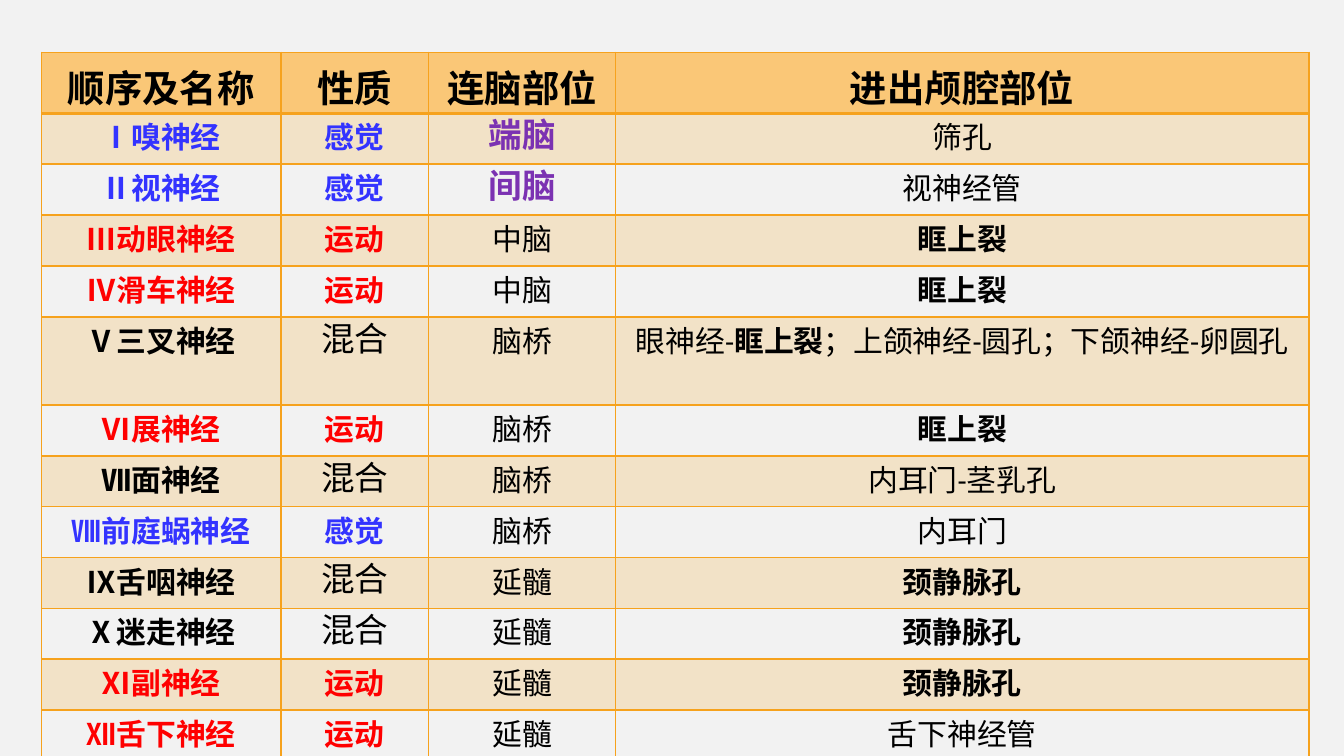
from lxml.etree import SubElement
from pptx import Presentation
from pptx.dml.color import RGBColor
from pptx.enum.text import PP_ALIGN as Align
from pptx.oxml.ns import qn
from pptx.util import Inches, Pt

COLORS = {
    "background": "F2F2F2",
    "header": "FAC777",
    "accent": "F6A21D",
    "text": "000000",
    "sensory": "3333FF",
    "motor": "FF0000",
    "purple": "7B32B2",
    "purple_dark": "401A5D",
}
NATURE_COLORS = {"感觉": "sensory", "运动": "motor", "混合": "text"}
FOREBRAIN = ("端脑", "间脑")
BOLD_EXITS = ("眶上裂", "颈静脉孔")

COL_WIDTHS = [1.78, 1.1, 1.39, 5.16]
ROW_HEIGHTS = [0.26, 0.29, 0.25, 0.33, 0.29, 0.31, 0.29,
               0.31, 0.29, 0.31, 0.31, 0.29, 0.29]
HEADER = ["顺序及名称", "性质", "连脑部位", "进出颅腔部位"]
NERVES = [
    ("Ⅰ嗅神经", "感觉", "端脑", ["筛孔"]),
    ("Ⅱ视神经", "感觉", "间脑", ["视神经管"]),
    ("Ⅲ动眼神经", "运动", "中脑", ["眶上裂"]),
    ("Ⅳ滑车神经", "运动", "中脑", ["眶上裂"]),
    ("Ⅴ三叉神经", "混合", "脑桥",
     ["眼神经-", "眶上裂", "；上颌神经-圆孔；下颌神经-卵圆孔"]),
    ("Ⅵ展神经", "运动", "脑桥", ["眶上裂"]),
    ("Ⅶ面神经", "混合", "脑桥", ["内耳门-茎乳孔"]),
    ("Ⅷ前庭蜗神经", "感觉", "脑桥", ["内耳门"]),
    ("Ⅸ舌咽神经", "混合", "延髓", ["颈静脉孔"]),
    ("Ⅹ迷走神经", "混合", "延髓", ["颈静脉孔"]),
    ("Ⅺ副神经", "运动", "延髓", ["颈静脉孔"]),
    ("Ⅻ舌下神经", "运动", "延髓", ["舌下神经管"]),
]


def rgb(name):
    return RGBColor.from_string(COLORS[name])


def add_text(p, text, size=16, font="Calibri", color="text", bold=False,
             gradient_to=None):
    r = p.add_run()
    r.text = text
    r.font.size = Pt(size)
    r.font.name = font
    r.font.bold = bold
    if gradient_to:
        fill = r.font.fill
        fill.gradient()
        fill.gradient_angle = 0
        for stop, name in zip(fill.gradient_stops, (color, gradient_to)):
            stop.color.rgb = rgb(name)
    else:
        r.font.color.rgb = rgb(color)


def start_paragraph(cell, spacing=None):
    p = cell.text_frame.paragraphs[0]
    p.alignment = Align.CENTER
    if spacing:
        p.line_spacing = Pt(spacing)
    return p


def set_borders(cell, top=1, bottom=1):
    tc_pr = cell._tc.get_or_add_tcPr()
    for side, width in (("L", 1), ("R", 1), ("T", top), ("B", bottom)):
        ln = SubElement(tc_pr, qn(f"a:ln{side}"), w=str(Pt(width)))
        fill = SubElement(ln, qn("a:solidFill"))
        SubElement(fill, qn("a:srgbClr"), val=COLORS["accent"])


def set_fill(cell, color=None, opacity=100):
    if color is None:
        cell.fill.background()
        return
    cell.fill.solid()
    cell.fill.fore_color.rgb = rgb(color)
    if opacity < 100:
        clr = cell._tc.tcPr.find(f"{qn('a:solidFill')}/{qn('a:srgbClr')}")
        SubElement(clr, qn("a:alpha"), val=str(opacity * 1000))


def fill_header(table):
    for cell, title in zip(table.rows[0].cells, HEADER):
        cell.margin_bottom = 0
        set_borders(cell, bottom=2)
        set_fill(cell, "header")
        add_text(start_paragraph(cell), title, size=20, bold=True)


def fill_nerve(table, row, nerve):
    name, nature, brain, exits = nerve
    cells = list(table.rows[row].cells)
    for cell in cells:
        set_borders(cell, top=2 if row == 1 else 1)
        if row % 2:
            set_fill(cell, "accent", opacity=20)
        else:
            set_fill(cell)
    name_p, nature_p, brain_p, exit_p = [start_paragraph(c, 20) for c in cells]

    color = NATURE_COLORS[nature]
    mixed = nature == "混合"
    add_text(name_p, name, font="Arial", color=color, bold=True)
    add_text(nature_p, nature, size=18 if mixed else 16, color=color,
             bold=not mixed)
    if brain in FOREBRAIN:
        add_text(brain_p, brain, size=18, color="purple", bold=True,
                 gradient_to="purple_dark")
    else:
        add_text(brain_p, brain)
    for text in exits:
        add_text(exit_p, text, bold=text in BOLD_EXITS)


def add_nerve_table(slide):
    frame = slide.shapes.add_table(
        len(ROW_HEIGHTS), len(COL_WIDTHS),
        Inches(0.31), Inches(0.39), Inches(9.44), Inches(4.87))
    table = frame.table
    table.horz_banding = False
    for column, width in zip(table.columns, COL_WIDTHS):
        column.width = Inches(width)
    for row, height in zip(table.rows, ROW_HEIGHTS):
        row.height = Inches(height)
    fill_header(table)
    for row, nerve in enumerate(NERVES, 1):
        fill_nerve(table, row, nerve)


def main():
    prs = Presentation()
    prs.slide_width = Inches(10)
    prs.slide_height = Inches(10 * 9 / 16)
    slide = prs.slides.add_slide(prs.slide_layouts[6])
    slide.background.fill.solid()
    slide.background.fill.fore_color.rgb = rgb("background")
    add_nerve_table(slide)
    prs.save("out.pptx")


if __name__ == "__main__":
    main()
